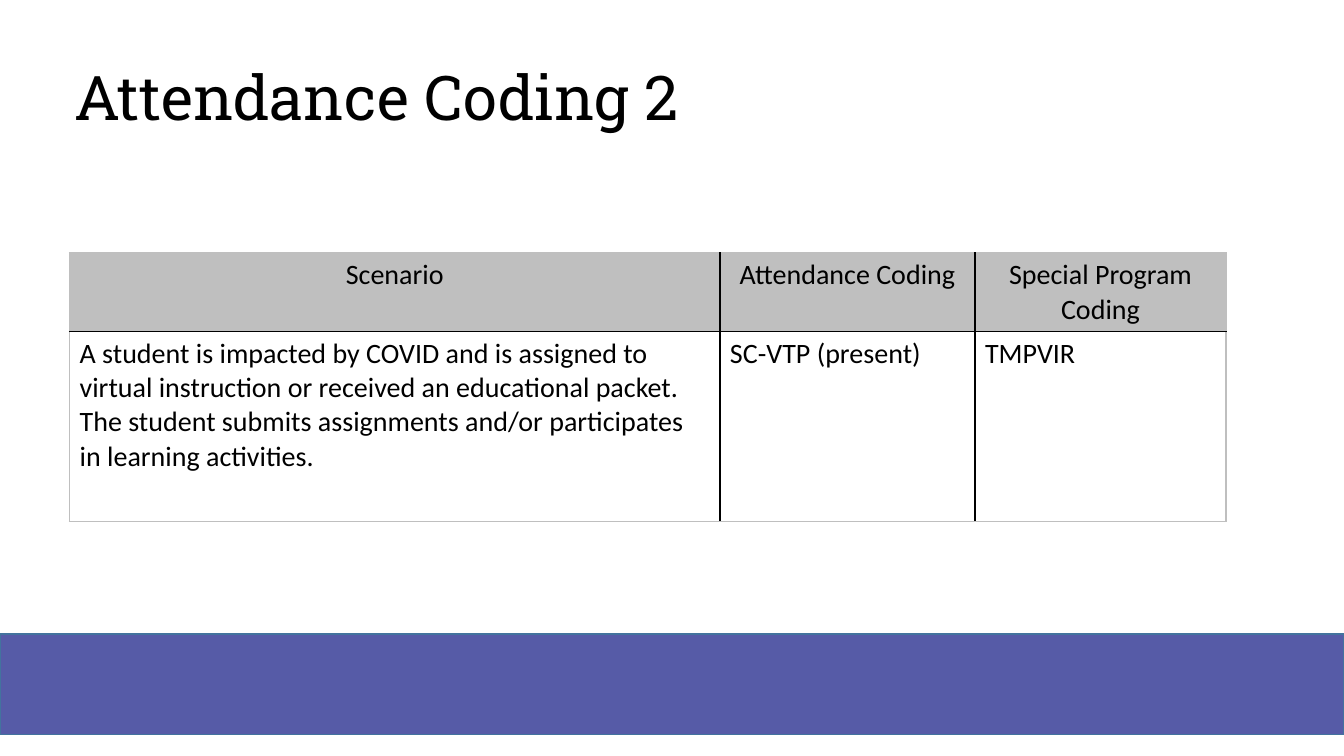
from lxml.etree import SubElement
from pptx import Presentation
from pptx.dml.color import RGBColor
from pptx.enum.shapes import MSO_SHAPE
from pptx.enum.text import MSO_ANCHOR, PP_ALIGN
from pptx.oxml import parse_xml
from pptx.oxml.ns import nsdecls
from pptx.util import Inches, Pt

COLORS = {"band": "565BA7", "edge": "43739E", "head": "BFBFBF",
          "ink": "000000", "page": "FFFFFF"}
COLS = [6.45, 2.53, 2.49]
ROWS = [0.78, 1.88]
CELLS = [
    ["Scenario", "Attendance Coding", "Special Program Coding"],
    ["A student is impacted by COVID and is assigned to virtual instruction "
     "or received an educational packet. The student submits assignments "
     "and/or participates in learning activities.",
     "SC-VTP (present)", "TMPVIR"],
]


def color(name):
    return RGBColor.from_string(COLORS[name])


def add_run(para, text, font, size):
    run = para.add_run()
    run.text = text
    run.font.name = font
    run.font.size = Pt(size)
    run.font.color.rgb = color("ink")


def add_band(slide, x, y, w, h):
    band = slide.shapes.add_shape(
        MSO_SHAPE.RECTANGLE, Inches(x), Inches(y), Inches(w), Inches(h))
    band.shadow.inherit = False
    band.fill.solid()
    band.fill.fore_color.rgb = color("band")
    band.line.color.rgb = color("edge")
    band.line.width = Pt(1)


def add_title(slide, x, y, w, h):
    frame = slide.shapes.add_textbox(
        Inches(x), Inches(y), Inches(w), Inches(h)).text_frame
    frame.word_wrap = True
    frame.vertical_anchor = MSO_ANCHOR.MIDDLE
    para = frame.paragraphs[0]
    para.line_spacing = 0.9
    add_run(para, "Attendance Coding 2", "Roboto Slab", 44)


def set_edges(cell, row, col):
    outer = {"L": col == 0, "R": col == len(COLS) - 1,
             "T": row == 0, "B": row == len(ROWS) - 1}
    props = cell._tc.get_or_add_tcPr()
    for spot, (side, rim) in enumerate(outer.items()):
        line = parse_xml(f'<a:ln{side} {nsdecls("a")} w="{Pt(1)}"/>')
        fill = SubElement(line, line.tag.replace(f"ln{side}", "solidFill"))
        SubElement(fill, line.tag.replace(f"ln{side}", "srgbClr"),
                   val=COLORS["head" if rim else "ink"])
        props.insert(spot, line)


def add_grid(slide, x, y):
    frame = slide.shapes.add_table(
        len(ROWS), len(COLS), Inches(x), Inches(y),
        Inches(sum(COLS)), Inches(sum(ROWS)))
    table = frame.table
    for col, width in enumerate(COLS):
        table.columns[col].width = Inches(width)
    for row, height in enumerate(ROWS):
        table.rows[row].height = Inches(height)
        for col, text in enumerate(CELLS[row]):
            cell = table.cell(row, col)
            cell.fill.solid()
            cell.fill.fore_color.rgb = color("page" if row else "head")
            set_edges(cell, row, col)
            para = cell.text_frame.paragraphs[0]
            para.alignment = PP_ALIGN.LEFT if row else PP_ALIGN.CENTER
            add_run(para, text, "Calibri", 20)
            para.runs[0].font.bold = False


def main():
    deck = Presentation()
    deck.slide_width = Inches(13.33)
    deck.slide_height = Inches(7.5)
    slide = deck.slides.add_slide(deck.slide_layouts[6])
    add_band(slide, 0, 6.29, 13.33, 1)
    add_title(slide, 0.64, 0.4, 12, 1.2)
    add_grid(slide, 0.69, 2.51)
    deck.save("out.pptx")


if __name__ == "__main__":
    main()
